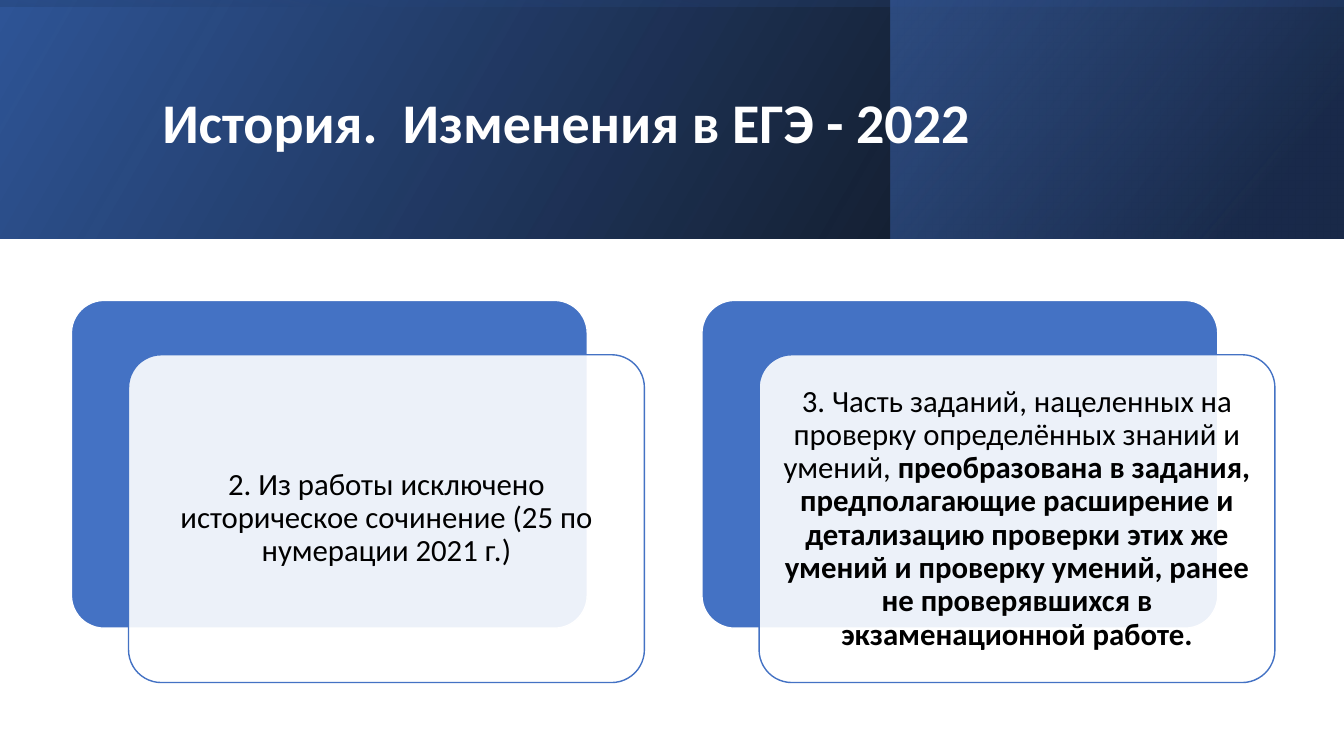
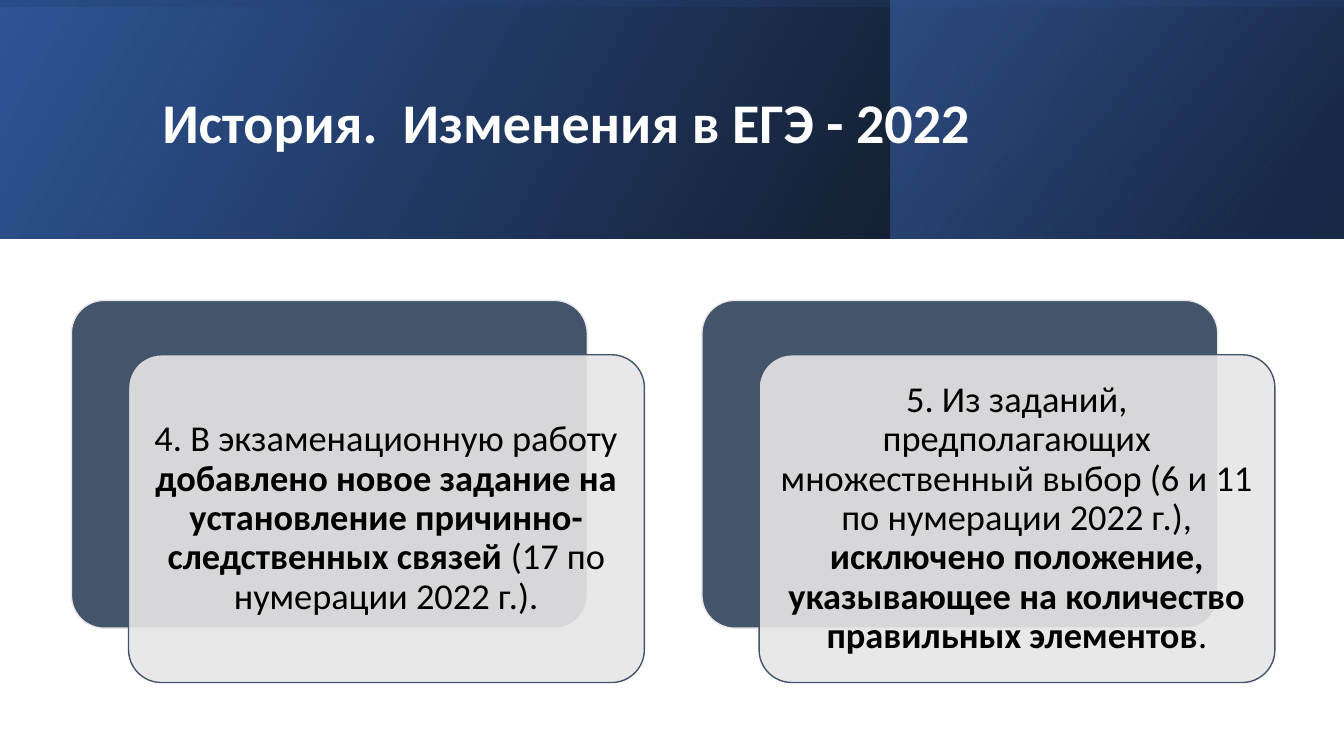
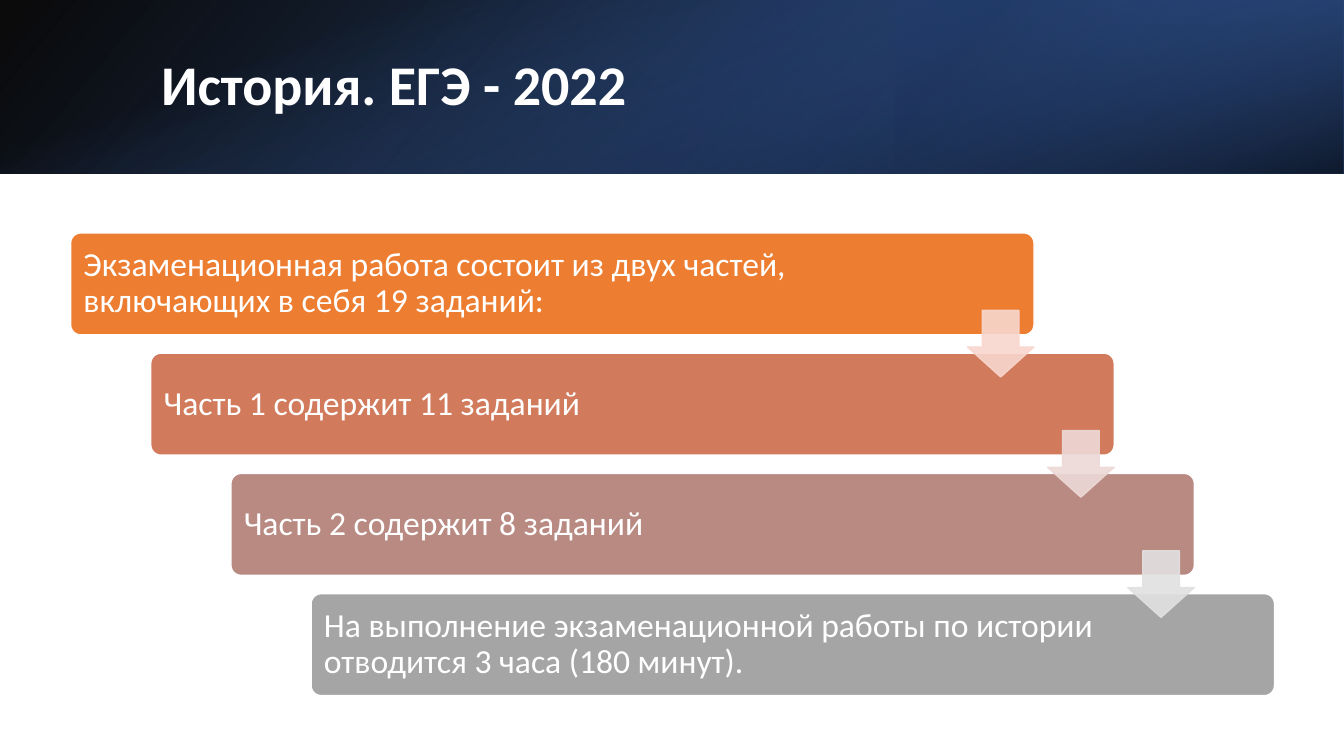
from lxml.etree import SubElement
from pptx import Presentation
from pptx.dml.color import RGBColor
from pptx.enum.shapes import MSO_SHAPE as Preset
from pptx.enum.text import MSO_ANCHOR as Anchor, MSO_AUTO_SIZE as AutoSize, PP_ALIGN as Align
from pptx.oxml.ns import qn
from pptx.util import Cm, Pt

FONT = "Calibri"
BLACK = RGBColor(0x00, 0x00, 0x00)
WHITE = RGBColor(0xFF, 0xFF, 0xFF)
NAVY = RGBColor(0x20, 0x38, 0x64)
DEEP_BLUE = RGBColor(0x2F, 0x55, 0x97)
BLUE = RGBColor(0x44, 0x72, 0xC4)
SLATE = RGBColor(0x44, 0x54, 0x6A)
LIGHT_GRAY = RGBColor(0xE7, 0xE6, 0xE6)
ORANGE = RGBColor(0xED, 0x7D, 0x31)
TERRACOTTA = RGBColor(0xD1, 0x7B, 0x5C)
DUSTY_ROSE = RGBColor(0xB9, 0x8A, 0x82)
GRAY = RGBColor(0xA5, 0xA5, 0xA5)
PALE_PEACH = RGBColor(0xF8, 0xD7, 0xCE)
PALE_ROSE = RGBColor(0xED, 0xD9, 0xD7)
PALE_GRAY = RGBColor(0xE1, 0xE1, 0xE1)

SLIDE_W, SLIDE_H = 33.87, 19.05

# A band is: layout, gradient stops (position, colour, opacity), angle, rotation, flipped
BASE_STOPS = [(0, BLACK, 96), (100, DEEP_BLUE, 100)]
TALL_HEADER = {
    "height": 6.02, "panel_left": 22.45, "title": (3.84, 0.97, 27, 4.37),
    "bands": [
        ("full", BASE_STOPS, 330, 0, True),
        ("panel", [(19, NAVY, 68), (100, BLUE, 48)], 320, 0, True),
        ("turned", [(23, DEEP_BLUE, 16), (99, BLACK, 45)], 350, 270, True),
    ],
}
LOW_HEADER = {
    "height": 4.37, "panel_left": 22.58, "title": (3.81, 0.97, 27.89, 2.44),
    "bands": [
        ("full", BASE_STOPS, 140, 0, True),
        ("panel", [(19, NAVY, 68), (100, BLUE, 79)], 320, 180, True),
        ("turned", [(23, BLUE, 0), (99, BLACK, 74)], 340, 90, False),
    ],
}

# Text is a list of (words, bold) pairs
CHANGES_TITLE = "История.  Изменения в ЕГЭ - 2022"
CARD_SLIDES = [
    {"dark": BLUE, "light": WHITE, "size": 22, "inset": 0.23, "cards": [
        [("2. Из работы исключено историческое сочинение (25 по нумерации 2021 г.)", False)],
        [("3. Часть заданий, нацеленных на проверку определённых знаний и умений, ", False),
         ("преобразована в задания, предполагающие расширение и детализацию проверки "
          "этих же умений и проверку умений, ранее не проверявшихся в "
          "экзаменационной работе.", True)],
    ]},
    {"dark": SLATE, "light": LIGHT_GRAY, "size": 26, "inset": 0.28, "cards": [
        [("4. В экзаменационную работу ", False),
         ("добавлено новое задание на установление причинно-следственных связей ", True),
         ("(17 по нумерации 2022 г.).", False)],
        [("5. Из заданий, предполагающих множественный выбор (6 и 11 по нумерации "
          "2022 г.), ", False),
         ("исключено положение, указывающее на количество правильных элементов", True),
         (".", False)],
    ]},
]
CARD_LEFT, CARD_TOP, CARD_W, CARD_H = 1.8, 7.57, 13, 8.26
CARD_PITCH, CARD_SHIFT_X, CARD_SHIFT_Y = 15.89, 1.44, 1.37

STEPS_TITLE = "История. ЕГЭ - 2022"
STEPS = [
    ("Экзаменационная работа состоит из двух частей, включающих в себя 19 заданий:", ORANGE),
    ("Часть 1 содержит 11 заданий", TERRACOTTA),
    ("Часть 2 содержит 8 заданий", DUSTY_ROSE),
    ("На выполнение экзаменационной работы по истории отводится 3 часа (180 минут).", GRAY),
]
ARROW_COLORS = [PALE_PEACH, PALE_ROSE, PALE_GRAY]
STEP_LEFT, STEP_TOP, STEP_W, STEP_H = 1.78, 5.87, 24.28, 2.57
STEP_DX, STEP_DY = 2.02, 3.03
ARROW_SIZE, ARROW_DROP = 1.68, 1.95


def set_opacity(color_format_parent, percent):
    for color in color_format_parent.iter(qn("a:srgbClr")):
        SubElement(color, qn("a:alpha")).set("val", str(percent * 1000))


def add_box(page, preset, box, fill=None, line=None, opacity=100, line_opacity=100, adjust=()):
    shape = page.shapes.add_shape(preset, *(Cm(length) for length in box))
    shape.shadow.inherit = False
    for index, value in enumerate(adjust):
        shape.adjustments[index] = value
    if fill is None:
        shape.fill.background()
    else:
        shape.fill.solid()
        shape.fill.fore_color.rgb = fill
        if opacity < 100:
            set_opacity(shape._element.spPr.find(qn("a:solidFill")), opacity)
    if line is None:
        shape.line.fill.background()
    else:
        shape.line.color.rgb = line
        shape.line.width = Pt(1)
        if line_opacity < 100:
            set_opacity(shape._element.spPr.find(qn("a:ln")), line_opacity)
    return shape


def write(shape, spans, size, color, align=Align.LEFT, insets=(0.25, 0.25, 0.25, 0.25)):
    """Fill the shape with one paragraph; insets are left, top, right, bottom."""
    frame = shape.text_frame
    frame.word_wrap = True
    frame.auto_size = AutoSize.NONE
    frame.vertical_anchor = Anchor.MIDDLE
    frame.margin_left, frame.margin_top, frame.margin_right, frame.margin_bottom = map(Cm, insets)
    para = frame.paragraphs[0]
    para.alignment = align
    para.line_spacing = 0.9
    for words, bold in spans:
        span = para.add_run()
        span.text = words
        span.font.name = FONT
        span.font.size = Pt(size)
        span.font.bold = bold
        span.font.color.rgb = color


def set_gradient(shape, stops, angle):
    properties = shape._element.spPr
    empty_fill = properties.find(qn("a:noFill"))
    gradient = SubElement(properties, qn("a:gradFill"))
    properties.replace(empty_fill, gradient)
    stop_list = SubElement(gradient, qn("a:gsLst"))
    for position, color, opacity in stops:
        stop = SubElement(stop_list, qn("a:gs"), pos=str(position * 1000))
        SubElement(stop, qn("a:srgbClr"), val=str(color))
        set_opacity(stop, opacity)
    SubElement(gradient, qn("a:lin"), ang=str(angle * 60000), scaled="0")


def add_page(deck, title, header):
    page = deck.slides.add_slide(deck.slide_layouts[5])
    height, panel_left = header["height"], header["panel_left"]
    boxes = {
        "full": (0, 0, SLIDE_W, height),
        "panel": (panel_left, 0, SLIDE_W - panel_left, height),
        "turned": ((SLIDE_W - height) / 2, (height - SLIDE_W) / 2, height, SLIDE_W),
    }
    for layout, stops, angle, rotation, flipped in header["bands"]:
        band = add_box(page, Preset.RECTANGLE, boxes[layout])
        set_gradient(band, stops, angle)
        band.rotation = rotation
        if flipped:
            band._element.spPr.find(qn("a:xfrm")).set("flipH", "1")

    heading = page.shapes.title
    heading.left, heading.top, heading.width, heading.height = map(Cm, header["title"])
    write(heading, [(title, True)], 40, WHITE, insets=(0.25, 0.13, 0.25, 0.13))
    page.shapes._spTree.append(heading._element)  # bring in front of the bands
    return page


def add_cards(page, dark, light, size, inset, cards):
    for index, spans in enumerate(cards):
        left = CARD_LEFT + index * CARD_PITCH
        add_box(page, Preset.ROUNDED_RECTANGLE, (left, CARD_TOP, CARD_W, CARD_H),
                fill=dark, line=light, adjust=[0.1])
        front = add_box(page, Preset.ROUNDED_RECTANGLE,
                        (left + CARD_SHIFT_X, CARD_TOP + CARD_SHIFT_Y, CARD_W, CARD_H),
                        fill=light, line=dark, opacity=90, adjust=[0.1])
        write(front, spans, size, BLACK, align=Align.CENTER, insets=[inset] * 4)


def add_steps(page):
    for index, (words, color) in enumerate(STEPS):
        box = (STEP_LEFT + index * STEP_DX, STEP_TOP + index * STEP_DY, STEP_W, STEP_H)
        step = add_box(page, Preset.ROUNDED_RECTANGLE, box, fill=color, line=WHITE, adjust=[0.1])
        write(step, [(words, False)], 24, WHITE, insets=(0.25, 0.25, 3.8, 0.25))
    for index, color in enumerate(ARROW_COLORS):
        left = STEP_LEFT + index * STEP_DX + STEP_W - ARROW_SIZE
        top = STEP_TOP + index * STEP_DY + ARROW_DROP
        add_box(page, Preset.DOWN_ARROW, (left, top, ARROW_SIZE, ARROW_SIZE), fill=color,
                line=color, opacity=90, line_opacity=90, adjust=[0.55, 0.45])


def main():
    deck = Presentation()
    deck.slide_width, deck.slide_height = Cm(SLIDE_W), Cm(SLIDE_H)
    for content in CARD_SLIDES:
        add_cards(add_page(deck, CHANGES_TITLE, TALL_HEADER), **content)
    add_steps(add_page(deck, STEPS_TITLE, LOW_HEADER))
    deck.save("out.pptx")


if __name__ == "__main__":
    main()
